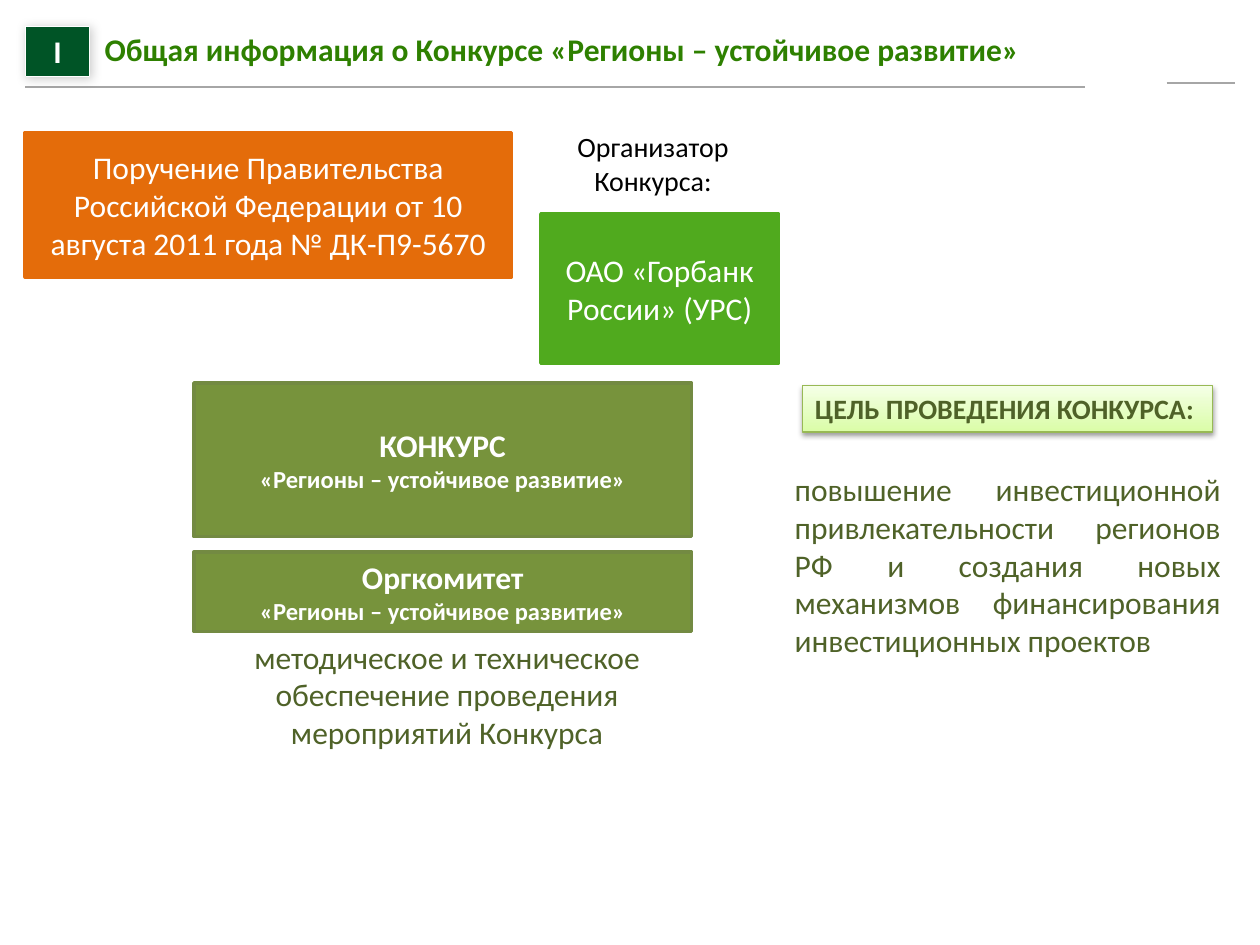
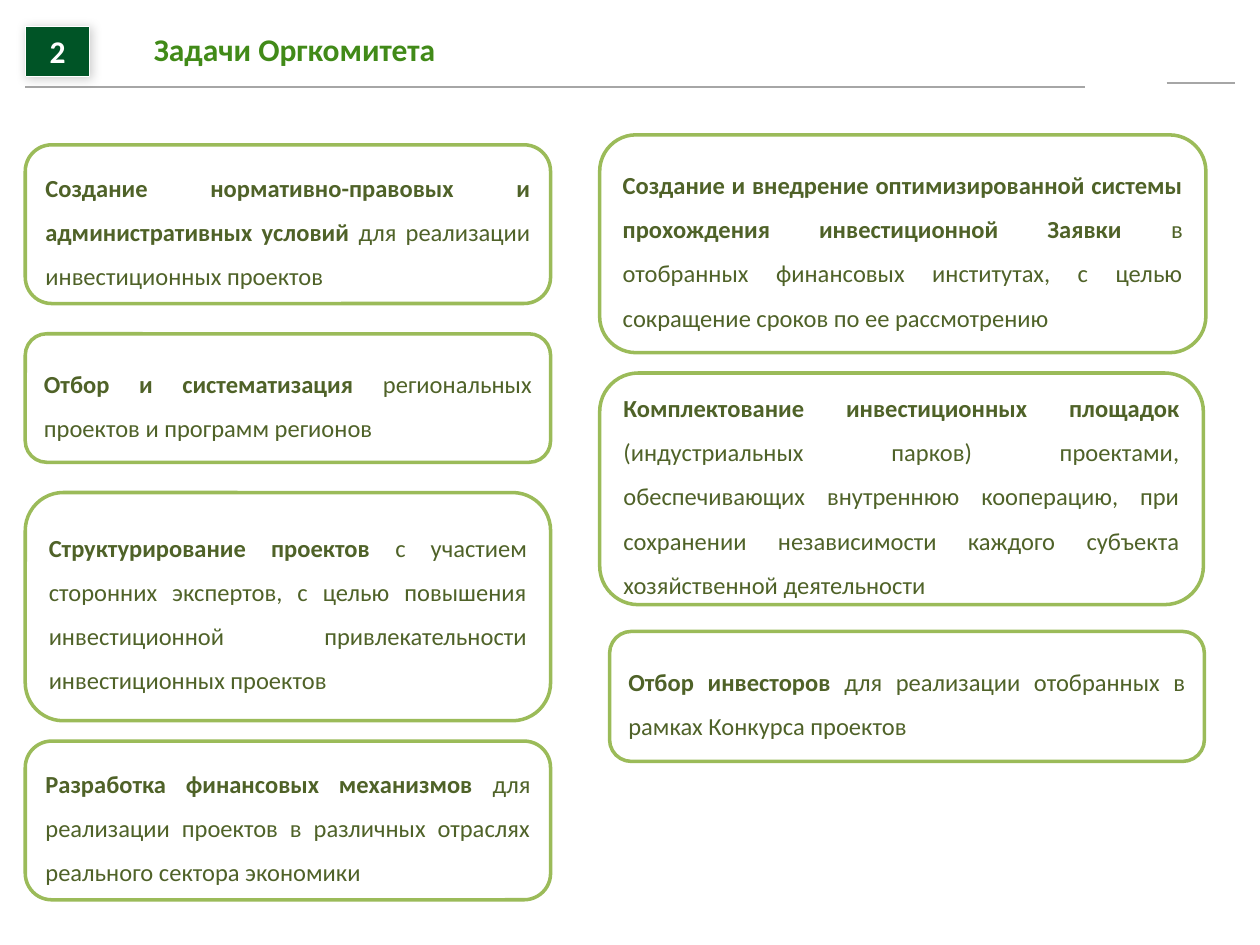
"""Build two slides on a regional development contest and its committee."""
from lxml import etree
from pptx import Presentation
from pptx.dml.color import RGBColor
from pptx.enum.shapes import MSO_CONNECTOR, MSO_SHAPE
from pptx.enum.text import MSO_ANCHOR, MSO_AUTO_SIZE, PP_ALIGN
from pptx.oxml import parse_xml
from pptx.oxml.ns import nsdecls, qn
from pptx.util import Cm, Pt

RECT, ROUND = MSO_SHAPE.RECTANGLE, MSO_SHAPE.ROUNDED_RECTANGLE
LINE = MSO_CONNECTOR.STRAIGHT
TOP, MID = MSO_ANCHOR.TOP, MSO_ANCHOR.MIDDLE
LEFT, CENTER, BOTH = PP_ALIGN.LEFT, PP_ALIGN.CENTER, PP_ALIGN.JUSTIFY
FIXED = MSO_AUTO_SIZE.NONE

FONT = "Calibri"
WHITE = RGBColor(0xFF, 0xFF, 0xFF)
BLACK = RGBColor(0x00, 0x00, 0x00)
GRAY = RGBColor(0xA6, 0xA6, 0xA6)
DARK = RGBColor(0x00, 0x54, 0x26)
HEAD = RGBColor(0x2E, 0x80, 0x00)
HEAD2 = RGBColor(0x41, 0x8A, 0x18)
INK = RGBColor(0x4F, 0x62, 0x28)
GREEN = RGBColor(0x50, 0xAA, 0x1E)
ORANGE = RGBColor(0xE4, 0x6C, 0x0A)
OLIVE = RGBColor(0x77, 0x93, 0x3C)
MOSS = RGBColor(0x73, 0x8A, 0x42)
LIME = RGBColor(0x9B, 0xBB, 0x59)
EDGE = RGBColor(0x98, 0xB9, 0x55)
PALE = RGBColor(0xF5, 0xFF, 0xE7)
MINT = RGBColor(0xDA, 0xFD, 0xA7)


def write(frame, paras, color, align, anchor=MID, space=None):
    """Fill a text frame with paragraphs of (text, size, bold) runs."""
    frame.word_wrap = True
    frame.auto_size = FIXED
    frame.vertical_anchor = anchor
    for num, runs in enumerate(paras):
        para = frame.add_paragraph() if num else frame.paragraphs[0]
        para.alignment = align
        if space:
            para.line_spacing = space
        for text, size, bold in runs:
            run = para.add_run()
            run.text = text
            run.font.name = FONT
            run.font.size = Pt(size)
            run.font.bold = bold
            run.font.color.rgb = color


def box(slide, kind, place, fill=None, edge=None, width=2, shade=None):
    """Add a shape; shade is (alpha, blur, distance, angle)."""
    shape = slide.shapes.add_shape(kind, *[Cm(num) for num in place])
    shape.shadow.inherit = False
    if fill is None:
        shape.fill.background()
    else:
        shape.fill.solid()
        shape.fill.fore_color.rgb = fill
    if edge is None:
        shape.line.fill.background()
    else:
        shape.line.color.rgb = edge
        shape.line.width = Pt(width)
    if shade:
        alpha, blur, dist, angle = shade
        shape._element.spPr.find(qn("a:effectLst")).append(parse_xml(
            f'<a:outerShdw {nsdecls("a")} blurRad="{Pt(blur)}" dist="{Pt(dist)}" '
            f'dir="{angle * 60000}" rotWithShape="0"><a:srgbClr val="000000">'
            f'<a:alpha val="{alpha * 1000}"/></a:srgbClr></a:outerShdw>'))
    return shape


deck = Presentation()
deck.slide_width, deck.slide_height = Cm(25.4), Cm(19.05)

heads = [
    ("I", "Общая информация о Конкурсе «Регионы – устойчивое развитие»", 2.11, HEAD),
    ("2", "Задачи Оргкомитета", 3.1, HEAD2),
]
slides = []
for mark, text, left, color in heads:
    slide = deck.slides.add_slide(deck.slide_layouts[5])
    slides.append(slide)
    for start, end, y in [(0.51, 21.87, 1.75), (23.52, 24.89, 1.68)]:
        rule = slide.shapes.add_connector(LINE, Cm(start), Cm(y), Cm(end), Cm(y))
        rule.line.color.rgb = GRAY
        rule.line.width = Pt(1)
        etree.SubElement(rule._element.spPr, qn("a:effectLst"))
    title = slide.shapes.title
    title.left, title.top = Cm(left), Cm(0.28)
    title.width, title.height = Cm(21.57 - left), Cm(1.42)
    frame = title.text_frame
    frame.margin_left = frame.margin_right = 0
    frame.margin_top = frame.margin_bottom = 0
    write(frame, [[(text, 18, True)]], color, LEFT)
    badge = box(slide, RECT, (0.51, 0.53, 1.3, 1.02), DARK, WHITE, 0.75, (20, 6, 1, 45))
    write(badge.text_frame, [[(mark, 18, True)]], WHITE, CENTER, TOP)

first, second = slides
name = [("«Регионы – устойчивое развитие»", 14, True)]
cards = [
    ((10.9, 4.32, 4.8, 3), GREEN, GREEN, WHITE, CENTER, MID,
     [[("ОАО «Горбанк России» (УРС)", 18, False)]]),
    ((11.3, 2.49, 3.73, 1.62), None, None, BLACK, CENTER, TOP,
     [[("Организатор", 16, False)], [("Конкурса:", 16, False)]]),
    ((3.91, 7.72, 10.03, 3.1), OLIVE, MOSS, WHITE, CENTER, MID,
     [[("КОНКУРС", 18, True)], name]),
    ((0.51, 2.67, 9.8, 2.92), ORANGE, ORANGE, WHITE, CENTER, MID,
     [[("Поручение Правительства Российской Федерации от 10 августа 2011 года "
        "№ ДК-П9-5670", 18, False)]]),
    ((15.77, 9.35, 9.09, 4.11), None, None, INK, BOTH, TOP,
     [[("повышение инвестиционной привлекательности регионов РФ и создания новых "
        "механизмов финансирования инвестиционных проектов", 18, False)]]),
    ((3.91, 12.73, 10.21, 2.57), WHITE, None, INK, CENTER, TOP,
     [[("методическое и техническое обеспечение проведения мероприятий Конкурса",
        18, False)]]),
    ((3.91, 11.13, 10.03, 1.6), OLIVE, MOSS, WHITE, CENTER, MID,
     [[("Оргкомитет", 18, True)], name]),
]
for place, fill, edge, color, align, anchor, paras in cards:
    card = box(first, RECT, place, fill, edge)
    write(card.text_frame, paras, color, align, anchor)

goal = box(first, RECT, (16.18, 7.77, 8.26, 0.94), MINT, EDGE, 0.75, (38, 3.1, 1.6, 90))
goal.fill.gradient()
goal.fill.gradient_angle = 90
for stop, color in zip(goal.fill.gradient_stops, (MINT, PALE)):
    stop.color.rgb = color
write(goal.text_frame, [[("ЦЕЛЬ ПРОВЕДЕНИЯ КОНКУРСА:", 16, True)]], INK, LEFT, TOP)

tasks = [
    ((0.51, 2.92, 10.59, 3.2), "Создание нормативно-правовых и административных условий ",
     "для реализации инвестиционных проектов"),
    ((0.51, 6.73, 10.59, 2.59), "Отбор и систематизация ",
     "региональных проектов и программ регионов"),
    ((0.51, 9.93, 10.59, 4.6), "Структурирование проектов ",
     "с участием сторонних экспертов, с целью повышения инвестиционной "
     "привлекательности инвестиционных проектов"),
    ((0.51, 14.94, 10.59, 3.2), "Разработка финансовых механизмов ",
     "для реализации проектов в различных отраслях реального сектора экономики"),
    ((12.09, 2.72, 12.22, 4.39),
     "Создание и внедрение оптимизированной системы прохождения инвестиционной Заявки ",
     "в отобранных финансовых институтах, с целью сокращение сроков по ее рассмотрению"),
    ((12.09, 7.52, 12.17, 4.67), "Комплектование инвестиционных площадок ",
     "(индустриальных парков) проектами, обеспечивающих внутреннюю кооперацию, при "
     "сохранении независимости каждого субъекта хозяйственной деятельности"),
    ((12.29, 12.73, 11.99, 2.62), "Отбор инвесторов ",
     "для реализации отобранных в рамках Конкурса проектов"),
]
for place, lead, rest in tasks:
    task = box(second, ROUND, place, WHITE, LIME)
    write(task.text_frame, [[(lead, 14, True), (rest, 14, False)]], INK, BOTH, space=1.5)

deck.save("out.pptx")
